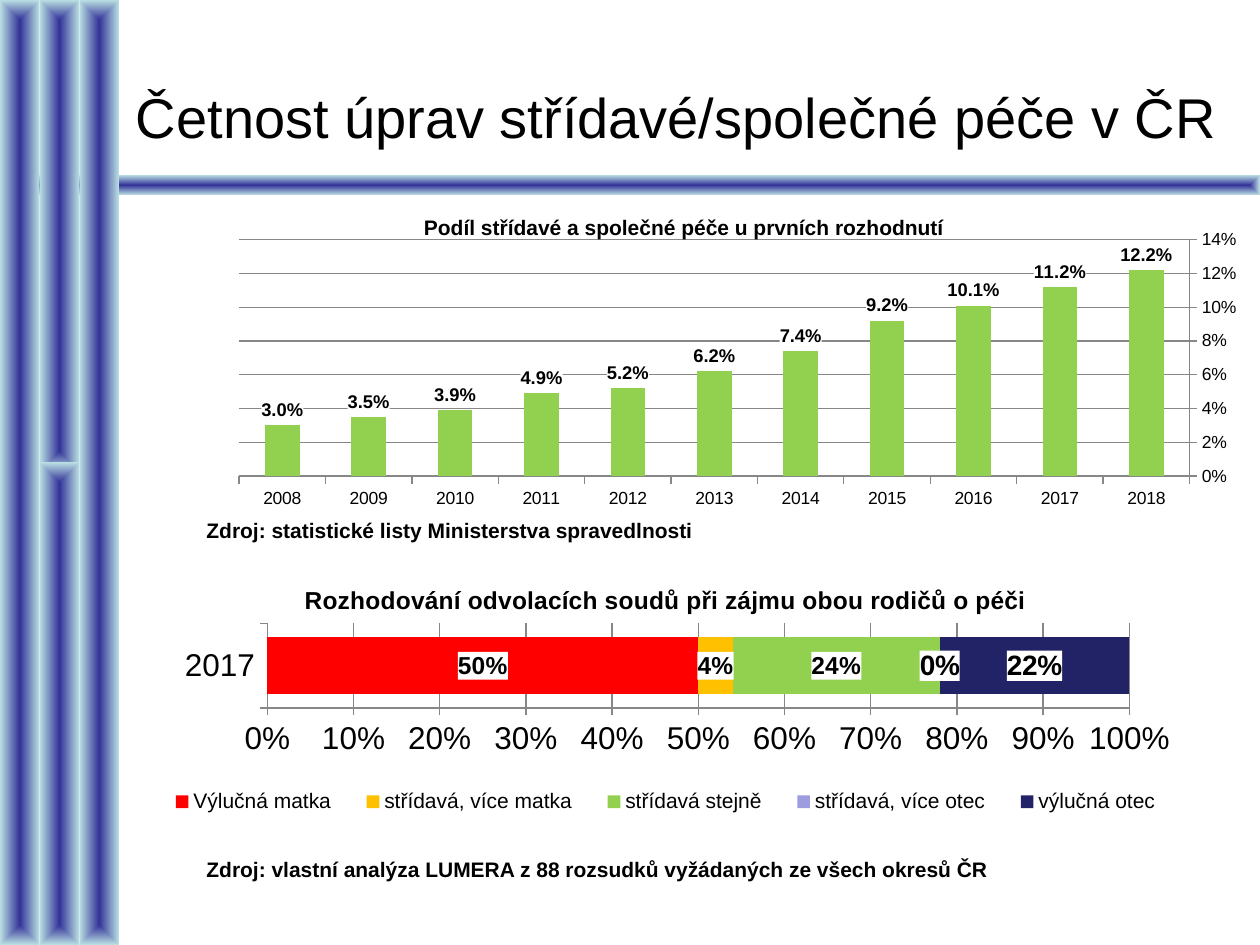
"""Build the slide on how often shared custody is ordered in the Czech Republic."""
from dataclasses import dataclass

from pptx import Presentation
from pptx.chart.data import CategoryChartData
from pptx.dml.color import RGBColor
from pptx.enum.chart import (XL_AXIS_CROSSES, XL_CHART_TYPE, XL_LABEL_POSITION,
                             XL_LEGEND_POSITION, XL_TICK_MARK)
from pptx.enum.shapes import MSO_SHAPE
from pptx.enum.text import MSO_ANCHOR
from pptx.oxml import parse_xml
from pptx.oxml.ns import nsdecls, qn
from pptx.util import Pt


@dataclass(frozen=True)
class Theme:
    font: str = "Arial"
    ink: str = "000000"
    paper: str = "FFFFFF"
    axis: str = "878787"
    beam_core: str = "333399"
    beam_edge: str = "BBE0E3"
    mother: str = "FF0000"
    mostly_mother: str = "FFC000"
    shared: str = "92D050"
    mostly_father: str = "9C9CDF"
    father: str = "222267"
    heading: float = 32
    source: float = 12
    legend: float = 12


def rgb(value):
    return RGBColor.from_string(value)


def write_text(frame, text, *, font, size, color, bold=False, anchor=None):
    if anchor is not None:
        frame.word_wrap = True
        frame.vertical_anchor = anchor
    run = frame.paragraphs[0].add_run()
    run.text = text
    run.font.name = font
    run.font.size = Pt(size)
    run.font.bold = bold
    run.font.color.rgb = rgb(color)


def set_layout(element, x, y, w=None, h=None, inner=False):
    for old in element.findall(qn("c:layout")):
        element.remove(old)
    target = '<c:layoutTarget val="inner"/>' if inner else ""
    modes = '<c:xMode val="edge"/><c:yMode val="edge"/>'
    sizes = "".join(f'<c:{key} val="{value}"/>'
                    for key, value in zip("xywh", (x, y, w, h)) if value is not None)
    layout = parse_xml(f'<c:layout {nsdecls("c")}><c:manualLayout>'
                       f'{target}{modes}{sizes}</c:manualLayout></c:layout>')
    overlay = element.find(qn("c:overlay"))
    if overlay is None:
        element.insert(0, layout)
    else:
        overlay.addprevious(layout)


class SlideBuilder:
    def __init__(self, slide, theme):
        self.slide = slide
        self.theme = theme

    def beam(self, left, top, width, height):
        theme = self.theme
        beam = self.slide.shapes.add_shape(
            MSO_SHAPE.RECTANGLE, Pt(left), Pt(top), Pt(width), Pt(height))
        beam.shadow.inherit = False
        beam.line.fill.background()
        gradient = parse_xml(
            f'<a:gradFill {nsdecls("a")} rotWithShape="1"><a:gsLst>'
            f'<a:gs pos="0"><a:srgbClr val="{theme.beam_core}"/></a:gs>'
            f'<a:gs pos="100000"><a:srgbClr val="{theme.beam_edge}"/></a:gs></a:gsLst>'
            '<a:path path="shape"><a:fillToRect l="50000" t="50000" r="50000" b="50000"/>'
            '</a:path></a:gradFill>')
        beam._element.spPr.find(qn("a:prstGeom")).addnext(gradient)

    def text(self, text, left, top, width, height, *, size, bold=False,
             anchor=MSO_ANCHOR.TOP):
        box = self.slide.shapes.add_textbox(Pt(left), Pt(top), Pt(width), Pt(height))
        write_text(box.text_frame, text, font=self.theme.font, size=size,
                   color=self.theme.ink, bold=bold, anchor=anchor)

    def chart(self, kind, bounds, categories, series, *, size, title, title_size,
              title_at, plot_at, gap, label_format, label_position, maximum, step):
        theme = self.theme
        data = CategoryChartData(number_format=label_format)
        data.categories = categories
        for name, values, _, _ in series:
            data.add_series(name, values)
        chart = self.slide.shapes.add_chart(kind, *map(Pt, bounds), data).chart
        chart.font.name = theme.font
        chart.font.size = Pt(size)
        chart.font.color.rgb = rgb(theme.ink)
        chart.has_legend = False
        chart.has_title = True
        write_text(chart.chart_title.text_frame, title, font=theme.font,
                   size=title_size, color=theme.ink, bold=True)
        root = chart._chartSpace
        set_layout(root.xpath("c:chart/c:title")[0], *title_at)
        set_layout(root.xpath("c:chart/c:plotArea")[0], *plot_at, inner=True)

        plot = chart.plots[0]
        plot.gap_width = gap
        plot.vary_by_categories = False
        for bar, (_, _, color, label_size) in zip(plot.series, series):
            bar.format.fill.solid()
            bar.format.fill.fore_color.rgb = rgb(color)
            self.labels(bar.data_labels, label_size, label_format, label_position)

        values = chart.value_axis
        values.minimum_scale = 0
        values.maximum_scale = maximum
        values.major_unit = step
        values.has_major_gridlines = True
        values.tick_labels.number_format = "0%"
        values.tick_labels.number_format_is_linked = False
        chart.category_axis.has_major_gridlines = False
        for axis in (values, chart.category_axis):
            axis.major_tick_mark = XL_TICK_MARK.OUTSIDE
            axis.minor_tick_mark = XL_TICK_MARK.NONE
        for line in (values.major_gridlines.format.line, values.format.line,
                     chart.category_axis.format.line):
            line.color.rgb = rgb(theme.axis)
            line.width = Pt(0.75)
        return chart

    def labels(self, labels, size, number_format, position):
        labels.show_value = True
        labels.number_format = number_format
        labels.number_format_is_linked = False
        labels.position = position
        labels.font.name = self.theme.font
        labels.font.size = Pt(size)
        labels.font.bold = True
        labels.font.color.rgb = rgb(self.theme.ink)
        backing = parse_xml(
            f'<c:spPr {nsdecls("c", "a")}><a:solidFill>'
            f'<a:srgbClr val="{self.theme.paper}"/></a:solidFill></c:spPr>')
        labels._element.find(qn("c:txPr")).addprevious(backing)

    def legend(self, chart, bounds):
        chart.has_legend = True
        legend = chart.legend
        legend.position = XL_LEGEND_POSITION.RIGHT
        legend.include_in_layout = False
        legend.font.name = self.theme.font
        legend.font.size = Pt(self.theme.legend)
        legend.font.color.rgb = rgb(self.theme.ink)
        set_layout(chart._chartSpace.xpath("c:chart/c:legend")[0], *bounds)


def main():
    deck = Presentation()
    deck.slide_width, deck.slide_height = Pt(720), Pt(540)
    theme = Theme()
    page = SlideBuilder(deck.slides.add_slide(deck.slide_layouts[6]), theme)

    column = 22.7
    page.beam(0, 100.1, 720, 11.5)
    for left, top, height in ((0, 0, 540), (2 * column, 0, 540),
                              (column, 0, 269.3), (column, 264.3, 275.7)):
        page.beam(left, top, column, height)

    page.text("Četnost úprav střídavé/společné péče v ČR", 70.6, 21.6, 640.8, 90,
              size=theme.heading, anchor=MSO_ANCHOR.MIDDLE)
    for source, top in (
            ("Zdroj: vlastní analýza LUMERA z 88 rozsudků vyžádaných ze všech okresů ČR", 486),
            ("Zdroj: statistické listy Ministerstva spravedlnosti", 292.3)):
        page.text(source, 110.9, top, 609, 21.6, size=theme.source, bold=True)

    shares = (0.122, 0.112, 0.101, 0.092, 0.074, 0.062, 0.052, 0.049, 0.039, 0.035, 0.03)
    yearly = page.chart(
        XL_CHART_TYPE.COLUMN_CLUSTERED, (65.5, 111.6, 646.6, 181.4),
        [str(year) for year in range(2018, 2007, -1)],
        [("Podíl", shares, theme.shared, 10.5)], size=10,
        title="Podíl střídavé a společné péče u prvních rozhodnutí", title_size=12,
        title_at=(0.27, 0.05), plot_at=(0.11, 0.14, 0.84, 0.745), gap=150,
        label_format="0.0%", label_position=XL_LABEL_POSITION.OUTSIDE_END,
        maximum=0.14, step=0.02)
    yearly.category_axis.reverse_order = True
    yearly.category_axis.crosses = XL_AXIS_CROSSES.MAXIMUM

    rulings = page.chart(
        XL_CHART_TYPE.BAR_STACKED, (65.5, 313.9, 623.5, 172.8), ["2017"],
        [("Výlučná matka", [0.5], theme.mother, 14),
         ("střídavá, více matka", [0.04], theme.mostly_mother, 14),
         ("střídavá stejně", [0.24], theme.shared, 14),
         ("střídavá, více otec", [0], theme.mostly_father, 16),
         ("výlučná otec", [0.22], theme.father, 16)], size=18,
        title="Rozhodování odvolacích soudů při zájmu obou rodičů o péči", title_size=14,
        title_at=(0.17, 0.1), plot_at=(0.14, 0.245, 0.79, 0.28), gap=50,
        label_format="0%", label_position=XL_LABEL_POSITION.CENTER,
        maximum=1, step=0.1)
    rulings.plots[0].overlap = 100
    page.legend(rulings, (0.03, 0.77, 0.95, 0.13))

    deck.save("out.pptx")


if __name__ == "__main__":
    main()
